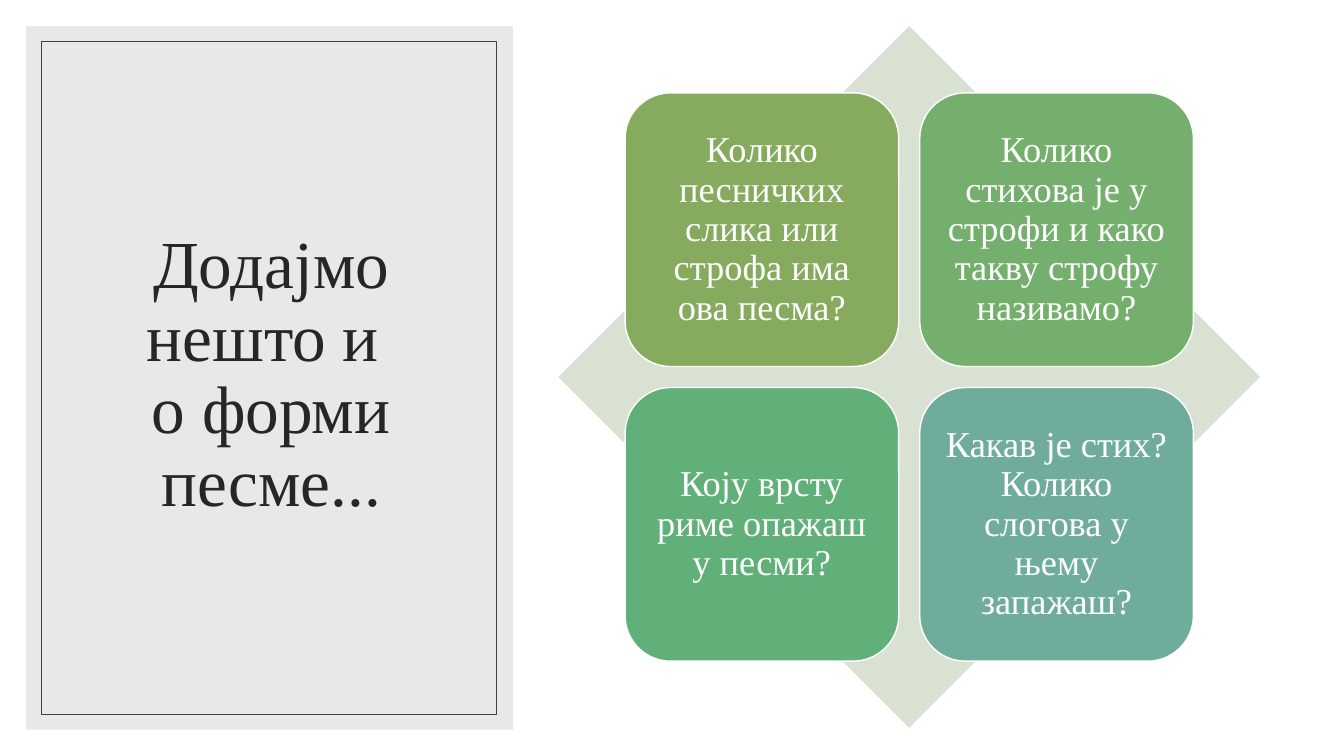
import pptx
import pptx.util
import pptx.dml.color
import pptx.enum.shapes
import pptx.enum.text
import pptx.oxml.ns
import lxml.etree

WIDE = pptx.util.Inches(13.333)
HIGH = pptx.util.Inches(7.5)
COL = WIDE / 133.33
ROW = HIGH / 75
FONT = "Times New Roman"
KIND = pptx.enum.shapes.MSO_SHAPE

HUES = {
    "panel": "D9D9D9",
    "frame": "404040",
    "title": "262626",
    "back": "D9E2D2",
    "olive": "87AB5E",
    "grass": "74AF6D",
    "green": "61B079",
    "teal": "6FAC9B",
    "white": "FFFFFF",
}

TILES = [
    ("olive", "Колико песничких слика или строфа има ова песма?"),
    ("grass", "Колико стихова је у строфи и како такву строфу називамо?"),
    ("green", "Коју врсту риме опажаш у песми?"),
    ("teal", "Какав је стих? Колико слогова у њему запажаш?"),
]


def tint(name):
    return pptx.dml.color.RGBColor.from_string(HUES[name])


def place(left, top, width, height):
    return [round(n) for n in (left * COL, top * ROW, width * COL, height * ROW)]


def draw(slide, kind, area, fill=None, line=None, weight=1, alpha=None):
    shape = slide.shapes.add_shape(kind, *place(*area))
    shape.shadow.inherit = False
    if fill:
        shape.fill.solid()
        shape.fill.fore_color.rgb = tint(fill)
    else:
        shape.fill.background()
    if line:
        shape.line.color.rgb = tint(line)
        shape.line.width = pptx.util.Pt(weight)
    else:
        shape.line.fill.background()
    if alpha:
        tag = pptx.oxml.ns.qn("a:srgbClr")
        color = next(shape.fill._xPr.iter(tag))
        node = lxml.etree.SubElement(color, pptx.oxml.ns.qn("a:alpha"))
        node.set("val", str(alpha * 1000))
    return shape


def write(shape, text, size=26, color="white", inset=0.11, after=0):
    frame = shape.text_frame
    frame.word_wrap = True
    frame.vertical_anchor = pptx.enum.text.MSO_ANCHOR.MIDDLE
    frame.margin_left = frame.margin_right = pptx.util.Inches(inset)
    frame.margin_top = frame.margin_bottom = pptx.util.Inches(inset)
    para = frame.paragraphs[0]
    para.text = text
    para.alignment = pptx.enum.text.PP_ALIGN.CENTER
    para.line_spacing = 0.9
    para.space_after = pptx.util.Pt(after)
    for run in para.runs:
        run.font.name = FONT
        run.font.size = pptx.util.Pt(size)
        run.font.color.rgb = tint(color)


def add_title(slide):
    draw(slide, KIND.RECTANGLE, (2.6, 2.6, 48.3, 69.8), fill="panel", alpha=60)
    box = slide.shapes.add_textbox(*place(6.3, 6.1, 41.2, 62.4))
    write(box, "Додајмо нешто и \vо форми песме...", size=48, color="title", inset=0.1)
    draw(slide, KIND.RECTANGLE, (4.1, 4.1, 45.1, 66.8), line="frame", weight=0.5)


def add_matrix(slide, left, top, side):
    draw(slide, KIND.DIAMOND, (left, top, side, side), fill="back")
    tile = side * 0.39
    edge = side * 0.095
    step = side - 2 * edge - tile
    for index, (hue, text) in enumerate(TILES):
        row, col = divmod(index, 2)
        area = (left + edge + col * step, top + edge + row * step, tile, tile)
        shape = draw(slide, KIND.ROUNDED_RECTANGLE, area, fill=hue, line="white")
        write(shape, text, after=9.1)


def main():
    deck = pptx.Presentation()
    deck.slide_width = WIDE
    deck.slide_height = HIGH
    slide = deck.slides.add_slide(deck.slide_layouts[6])
    add_title(slide)
    add_matrix(slide, left=55.4, top=2.6, side=69.6)
    deck.save("out.pptx")


if __name__ == "__main__":
    main()
